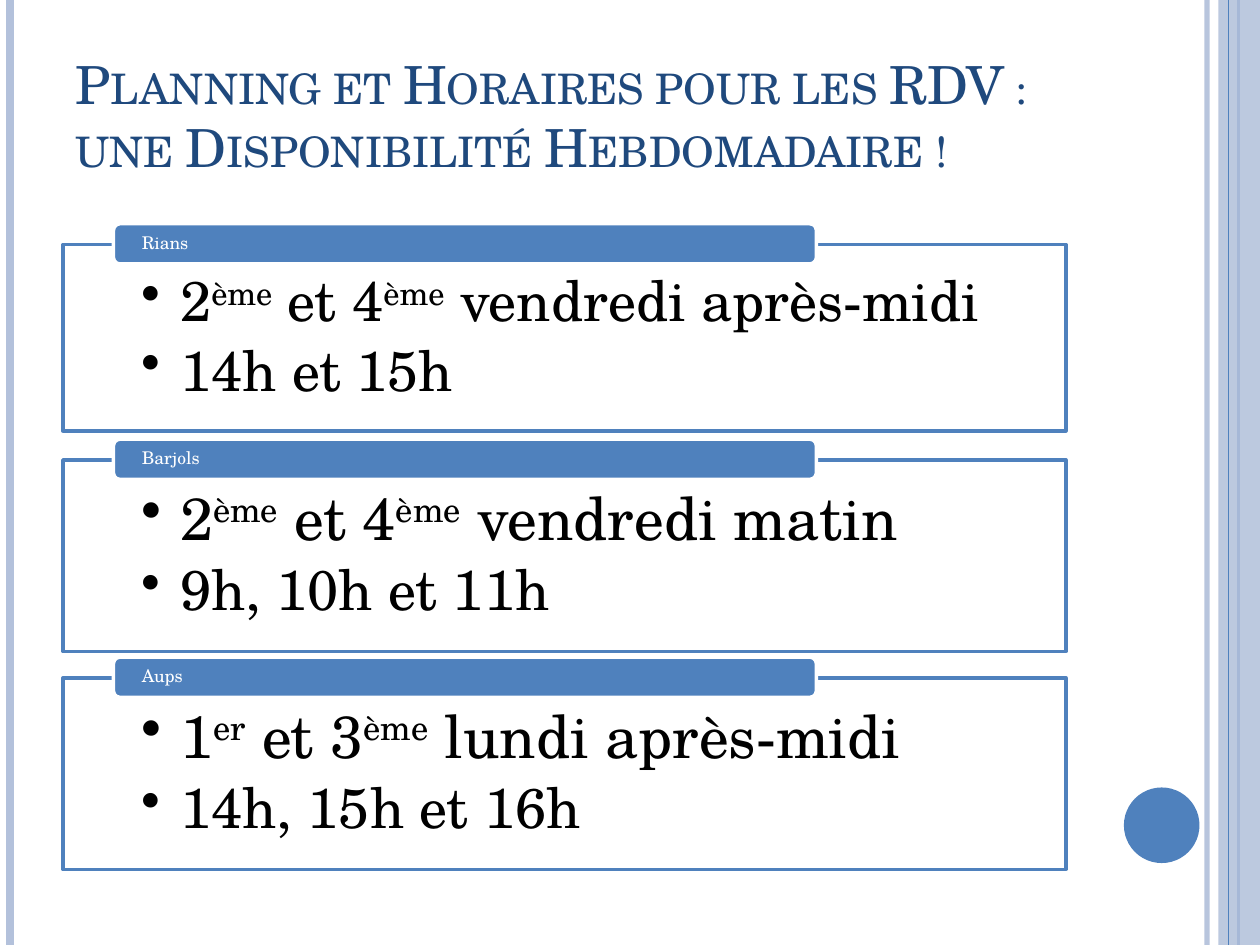
"""Build the slide of weekly appointment times in three towns."""
from lxml.etree import SubElement
from pptx import Presentation
from pptx.dml.color import RGBColor
from pptx.enum.shapes import MSO_CONNECTOR, MSO_SHAPE
from pptx.enum.text import MSO_ANCHOR, PP_ALIGN
from pptx.oxml.ns import qn
from pptx.util import Inches, Pt

COLORS = {name: RGBColor.from_string(value) for name, value in {
    "blue": "4F81BD", "pale": "B3C1DB", "navy": "1F497D", "white": "FFFFFF", "black": "000000",
}.items()}
FONT = "TeX Gyre Schola"

presentation = Presentation()
presentation.slide_width, presentation.slide_height = Inches(10), Inches(7.5)
slide = presentation.slides.add_slide(presentation.slide_layouts[6])
column = presentation.slide_width / 100
row = presentation.slide_height / 75


def add_box(kind, left, top, width, height, fill, line=None, opacity=100):
    shape = slide.shapes.add_shape(
        kind, round(left * column), round(top * row), round(width * column), round(height * row))
    shape.shadow.inherit = False
    shape.fill.solid()
    shape.fill.fore_color.rgb = COLORS[fill]
    if opacity < 100:
        color = next(shape._element.spPr.iter(qn("a:srgbClr")))
        SubElement(color, qn("a:alpha")).set("val", str(opacity * 1000))
    if line:
        shape.line.color.rgb = COLORS[line]
        shape.line.width = Pt(2)
    else:
        shape.line.fill.background()
    return shape


def write(frame, paragraph, text, color, size, raised=False):
    frame.word_wrap = True
    paragraph.alignment = PP_ALIGN.LEFT
    run = paragraph.add_run()
    run.text = text
    for name, value in {"name": FONT, "size": Pt(size)}.items():
        setattr(run.font, name, value)
    run.font.color.rgb = COLORS[color]
    if raised:
        run._r.get_or_add_rPr().set("baseline", "30000")
    return run


for x, color, weight, opacity in [
    (95.8, "pale", 3, 93), (0.8, "pale", 4.5, 100), (98.3, "blue", 1.5, 100),
    (97.5, "blue", 0.75, 100),
]:
    if x == 97.5:
        add_box(MSO_SHAPE.RECTANGLE, 96.7, 0, 3.3, 75, "pale", opacity=87)
    stripe = slide.shapes.add_connector(
        MSO_CONNECTOR.STRAIGHT, round(x * column), 0, round(x * column), presentation.slide_height)
    stripe.line.color.rgb = COLORS[color]
    stripe.line.width = Pt(weight)
    if opacity < 100:
        tint = next(stripe._element.spPr.iter(qn("a:srgbClr")))
        SubElement(tint, qn("a:alpha")).set("val", str(opacity * 1000))
    SubElement(stripe._element.spPr, qn("a:effectLst"))

add_box(MSO_SHAPE.OVAL, 89.2, 62.5, 6, 6, "blue")

title = slide.shapes.add_textbox(
    round(5 * column), round(2.1 * row), round(81.7 * column), round(12.5 * row)).text_frame
title.vertical_anchor = MSO_ANCHOR.BOTTOM
heading = write(title, title.paragraphs[0],
                "Planning et Horaires pour les RDV : une Disponibilité Hebdomadaire !", "navy", 30)
heading._r.get_or_add_rPr().set("cap", "small")

towns = [
    ("Rians", 19.4, 14.8, 32, ["2", "ème", " et 4", "ème", " vendredi après-midi"], "14h et 15h"),
    ("Barjols", 36.5, 15.2, 34, ["2", "ème", " et 4", "ème", " vendredi matin"], "9h, 10h et 11h"),
    ("Aups", 53.8, 15.2, 34, ["1", "er", " et 3", "ème", " lundi après-midi"], "14h, 15h et 16h"),
]
panel_format = {"margin_left": Inches(0.62), "margin_right": Inches(0.62),
                "margin_top": Inches(0.23), "margin_bottom": Inches(0.25),
                "vertical_anchor": MSO_ANCHOR.TOP}
tab_format = {"margin_left": Inches(0.21), "margin_right": Inches(0.21),
              "margin_top": 0, "margin_bottom": 0, "vertical_anchor": MSO_ANCHOR.MIDDLE}

for town, top, height, day_size, days, hours in towns:
    panel = add_box(MSO_SHAPE.RECTANGLE, 5, top, 79.6, height, "white", "blue", 90).text_frame
    tab = add_box(MSO_SHAPE.ROUNDED_RECTANGLE, 9, top - 1.65, 55.8, 3.2, "blue", "white").text_frame
    for frame, settings in [(panel, panel_format), (tab, tab_format)]:
        for name, value in settings.items():
            setattr(frame, name, value)

    for index, (parts, size) in enumerate([(days, day_size), ([hours], 32)]):
        paragraph = panel.paragraphs[0] if index == 0 else panel.add_paragraph()
        paragraph.line_spacing = 0.9
        paragraph.space_after = Pt(5)
        properties = paragraph._p.get_or_add_pPr()
        properties.set("marL", str(Inches(0.31)))
        properties.set("indent", str(-Inches(0.31)))
        SubElement(properties, qn("a:buChar")).set("char", "•")
        for position, part in enumerate(parts):
            write(panel, paragraph, part, "black", size, raised=position % 2 == 1)

    tab.paragraphs[0].line_spacing = 0.9
    write(tab, tab.paragraphs[0], town, "white", 10)

presentation.save("out.pptx")
